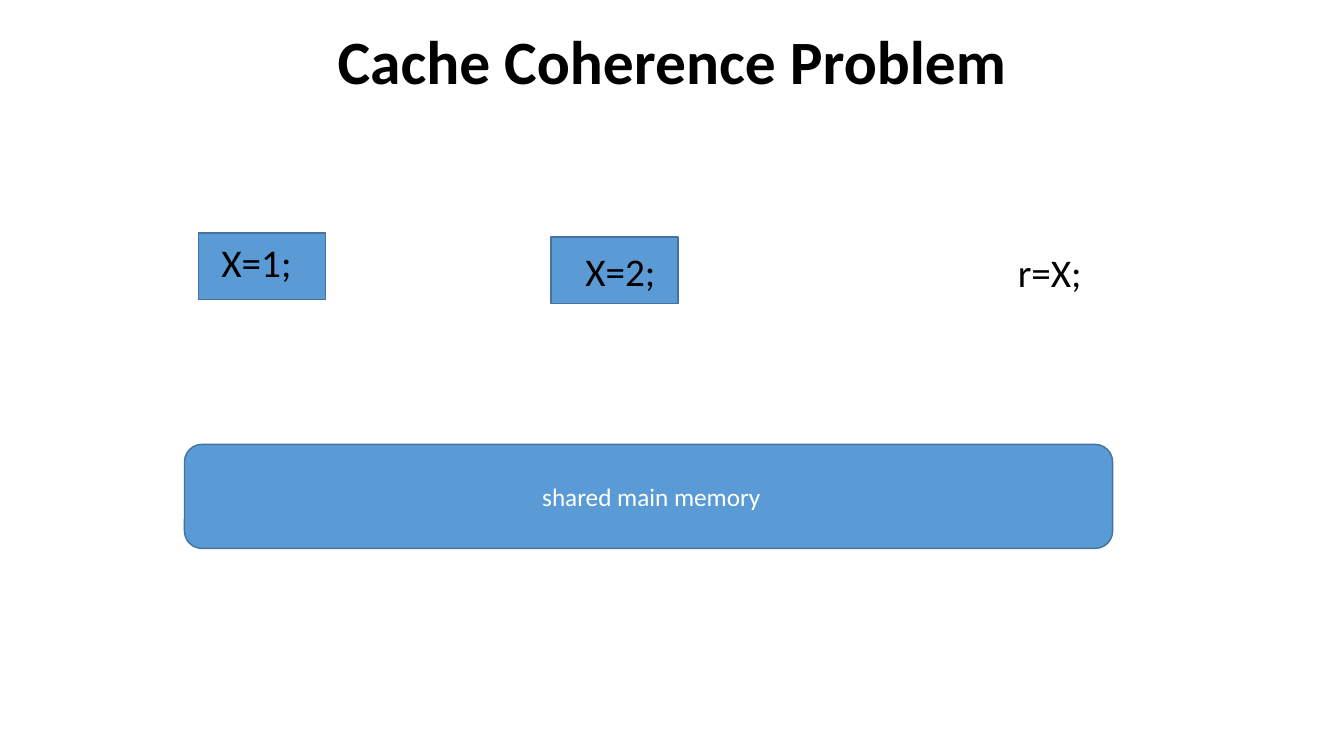
from dataclasses import dataclass

from pptx import Presentation
from pptx.dml.color import RGBColor
from pptx.enum.shapes import MSO_SHAPE
from pptx.enum.text import MSO_ANCHOR, PP_ALIGN
from pptx.util import Cm, Pt

RECT, ROUNDED = MSO_SHAPE.RECTANGLE, MSO_SHAPE.ROUNDED_RECTANGLE
LEFT, CENTER = PP_ALIGN.LEFT, PP_ALIGN.CENTER
TOP, MIDDLE = MSO_ANCHOR.TOP, MSO_ANCHOR.MIDDLE


@dataclass(frozen=True)
class Theme:
    font: str = "Calibri"
    dark: str = "000000"
    light: str = "FFFFFF"
    fill: str = "5B9BD5"
    line: str = "43739E"
    title_size: int = 44
    code_size: int = 28
    label_size: int = 18


class SlideBuilder:
    def __init__(self, prs, theme):
        self.theme = theme
        self.s = prs.slides.add_slide(prs.slide_layouts[6])

    def label(self, sp, text, size, color, align=LEFT, anchor=TOP, bold=False, spacing=1.0):
        tf = sp.text_frame
        tf.word_wrap = True
        tf.vertical_anchor = anchor
        p = tf.paragraphs[0]
        p.alignment, p.line_spacing = align, spacing
        r = p.add_run()
        r.text = text
        formats = {"name": self.theme.font, "size": Pt(size), "bold": bold}
        for name, value in formats.items():
            setattr(r.font, name, value)
        r.font.color.rgb = RGBColor.from_string(color)

    def text(self, box, text, size, **formats):
        sp = self.s.shapes.add_textbox(*map(Cm, box))
        self.label(sp, text, size, self.theme.dark, **formats)

    def block(self, kind, box):
        sp = self.s.shapes.add_shape(kind, *map(Cm, box))
        sp.shadow.inherit = False
        sp.fill.solid()
        sp.fill.fore_color.rgb = RGBColor.from_string(self.theme.fill)
        sp.line.color.rgb = RGBColor.from_string(self.theme.line)
        sp.line.width = Pt(1)
        return sp


def main():
    prs = Presentation()
    prs.slide_width, prs.slide_height = Cm(33.87), Cm(19.05)
    theme = Theme()
    slide = SlideBuilder(prs, theme)

    # Boxes behind the two assignments
    for left, top in ((13.89, 5.97), (5, 5.87)):
        slide.block(RECT, (left, top, 3.2, 1.68))

    # Title
    slide.text((2.34, 0.41, 29.21, 2.44), "Cache Coherence Problem", theme.title_size,
               align=CENTER, anchor=MIDDLE, bold=True, spacing=0.9)

    # Statements run by each processor
    statements = (
        (5.33, 5.87, 6.58, "X=1;"),
        (14.5, 6.1, 4.85, "X=2;"),
        (25.4, 6.12, 5.26, "r=X;"),
    )
    for left, top, width, code in statements:
        slide.text((left, top, width, 1.45), code, theme.code_size)

    # Shared memory
    memory = slide.block(ROUNDED, (4.65, 11.2, 23.39, 2.62))
    slide.label(memory, " shared main memory", theme.label_size, theme.light,
                align=CENTER, anchor=MIDDLE)

    prs.save("out.pptx")


if __name__ == "__main__":
    main()
